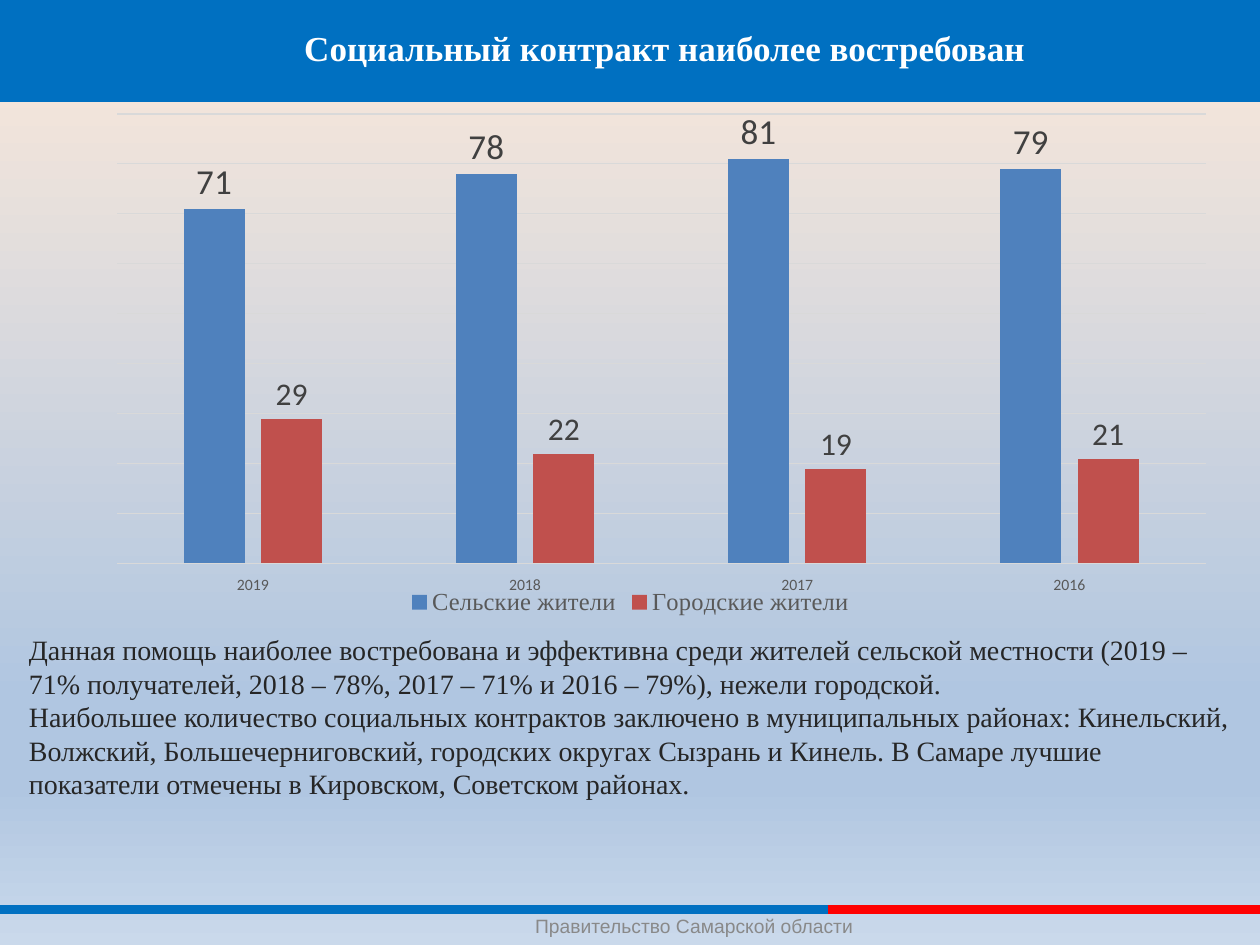
from dataclasses import dataclass

from lxml.etree import SubElement
from pptx import Presentation
from pptx.chart.data import CategoryChartData
from pptx.dml.color import RGBColor
from pptx.enum.chart import XL_CHART_TYPE as ChartType
from pptx.enum.chart import XL_LABEL_POSITION as LabelPosition
from pptx.enum.chart import XL_LEGEND_POSITION as LegendPosition
from pptx.enum.chart import XL_TICK_LABEL_POSITION as TickLabels
from pptx.enum.chart import XL_TICK_MARK as TickMark
from pptx.enum.shapes import MSO_CONNECTOR as Connector
from pptx.enum.shapes import MSO_SHAPE as Preset
from pptx.enum.text import MSO_ANCHOR as Anchor
from pptx.enum.text import PP_ALIGN as Align
from pptx.oxml.ns import qn
from pptx.util import Inches, Pt


@dataclass(frozen=True)
class Theme:
    blue: str = "0070C1"
    red: str = "FF0000"
    white: str = "FFFFFF"
    footer: str = "898989"
    body: str = "262626"
    labels: str = "404040"
    axis: str = "595959"
    grid: str = "D9D9D9"
    rural: str = "4F81BD"
    urban: str = "C0504D"
    backdrop: tuple = ((0, "FDEADA"), (74, "B0C6E1"), (83, "B0C6E1"), (100, "CAD9EB"))
    serif: str = "Times New Roman"
    sans: str = "Arial"
    chart_face: str = "Calibri"
    title_size: int = 20
    body_size: int = 16
    footer_size: int = 11
    legend_size: int = 14
    axis_size: int = 9


def style_font(font, size, color, face, bold=False):
    font.size = Pt(size)
    font.color.rgb = RGBColor.from_string(color)
    font.name = face
    font.bold = bold


def style_line(line, color, width):
    line.color.rgb = RGBColor.from_string(color)
    line.width = Pt(width)


class SlideBuilder:
    def __init__(self, slide, theme):
        self.slide = slide
        self.theme = theme

    def background(self):
        fill = self.slide.background.fill
        fill.gradient()
        fill.gradient_angle = 270
        stops = next(self.slide.element.iter(qn("a:gsLst")))
        for stop in list(stops):
            stops.remove(stop)
        for percent, color in self.theme.backdrop:
            stop = SubElement(stops, qn("a:gs"), pos=str(percent * 1000))
            SubElement(stop, qn("a:srgbClr"), val=color)

    def band(self, box, color):
        band = self.slide.shapes.add_shape(Preset.RECTANGLE, *map(Inches, box))
        band.shadow.inherit = False
        band.fill.solid()
        band.fill.fore_color.rgb = RGBColor.from_string(color)
        band.line.fill.background()

    def rule(self, left, right, y, color):
        rule = self.slide.shapes.add_connector(
            Connector.STRAIGHT, Inches(left), Inches(y), Inches(right), Inches(y))
        style_line(rule.line, color, 5)
        SubElement(rule.element.spPr, qn("a:effectLst"))

    def text(self, box, paragraphs, size, color, face, align=Align.LEFT,
             anchor=Anchor.TOP, bold=False, side=0.08):
        frame = self.slide.shapes.add_textbox(*map(Inches, box)).text_frame
        frame.word_wrap = True
        frame.vertical_anchor = anchor
        frame.margin_left = frame.margin_right = Inches(side)
        frame.margin_top = frame.margin_bottom = Inches(0.04)
        for index, wording in enumerate(paragraphs):
            paragraph = frame.add_paragraph() if index else frame.paragraphs[0]
            paragraph.alignment = align
            run = paragraph.add_run()
            run.text = wording
            style_font(run.font, size, color, face, bold)

    def column_chart(self, box, years, groups, plot_box):
        theme = self.theme
        data = CategoryChartData()
        data.categories = years
        for name, shares, _, _ in groups:
            data.add_series(name, shares)
        chart = self.slide.shapes.add_chart(
            ChartType.COLUMN_CLUSTERED, *map(Inches, box), data).chart
        chart.has_title = False
        chart.font.size = Pt(10)
        chart.font.name = theme.chart_face

        chart.has_legend = True
        chart.legend.position = LegendPosition.BOTTOM
        chart.legend.include_in_layout = False
        style_font(chart.legend.font, theme.legend_size, theme.axis, theme.serif)

        year_axis = chart.category_axis
        year_axis.major_tick_mark = year_axis.minor_tick_mark = TickMark.NONE
        year_axis.tick_label_position = TickLabels.LOW
        style_font(year_axis.tick_labels.font, theme.axis_size, theme.axis, theme.chart_face)
        style_line(year_axis.format.line, theme.grid, 0.75)

        share_axis = chart.value_axis
        share_axis.visible = False
        share_axis.minimum_scale = 0
        share_axis.maximum_scale = 90
        share_axis.major_unit = 10
        style_line(share_axis.major_gridlines.format.line, theme.grid, 0.75)

        plot = chart.plots[0]
        plot.gap_width = 219
        plot.overlap = -27
        plot.vary_by_categories = False
        for series, (_, _, color, label_size) in zip(plot.series, groups):
            series.format.fill.solid()
            series.format.fill.fore_color.rgb = RGBColor.from_string(color)
            labels = series.data_labels
            labels.show_value = True
            labels.position = LabelPosition.OUTSIDE_END
            style_font(labels.font, label_size, theme.labels, theme.chart_face)
        self.place_plot(chart, plot_box)

    def place_plot(self, chart, plot_box):
        area = next(chart.element.iter(qn("c:plotArea")))
        for old in area.findall(qn("c:layout")):
            area.remove(old)
        layout = SubElement(area, qn("c:layout"))
        area.insert(0, layout)
        manual = SubElement(layout, qn("c:manualLayout"))
        settings = [("layoutTarget", "inner"), ("xMode", "edge"), ("yMode", "edge")]
        settings += zip("xywh", map(str, plot_box))
        for tag, value in settings:
            SubElement(manual, qn(f"c:{tag}"), val=value)


def main():
    theme = Theme()
    deck = Presentation()
    deck.slide_width, deck.slide_height = Inches(10), Inches(7.5)
    builder = SlideBuilder(deck.slides.add_slide(deck.slide_layouts[6]), theme)

    builder.background()
    footer_y, color_split = 7.22, 6.57
    builder.rule(0, color_split, footer_y, theme.blue)
    builder.text((2.24, footer_y, 6.54, 0.27), ["Правительство Самарской области"],
                 theme.footer_size, theme.footer, theme.sans, Align.CENTER, side=0.04)
    builder.rule(color_split, 10, footer_y, theme.red)

    builder.band((0, -0.03, 10, 0.84), theme.blue)
    builder.text((1.3, -0.03, 7.95, 0.81), ["Социальный контракт наиболее востребован"],
                 theme.title_size, theme.white, theme.serif, Align.CENTER,
                 Anchor.MIDDLE, bold=True)

    groups = [
        ("Сельские жители", (71, 78, 81, 79), theme.rural, 20),
        ("Городские жители", (29, 22, 19, 21), theme.urban, 18),
    ]
    builder.column_chart((0.15, 0.78, 9.71, 4.15), ["2019", "2018", "2017", "2016"],
                         groups, (0.08, 0.03, 0.89, 0.86))

    builder.text((0.15, 4.98, 9.71, 1.43), [
        "Данная помощь наиболее востребована и эффективна среди жителей сельской "
        "местности (2019 – 71% получателей, 2018 – 78%, 2017 – 71% и 2016 – 79%), "
        "нежели городской.",
        "Наибольшее количество социальных контрактов заключено в муниципальных "
        "районах: Кинельский, Волжский, Большечерниговский, городских округах "
        "Сызрань и Кинель. В Самаре лучшие показатели отмечены в Кировском, "
        "Советском районах.",
    ], theme.body_size, theme.body, theme.serif)

    deck.save("out.pptx")


if __name__ == "__main__":
    main()
